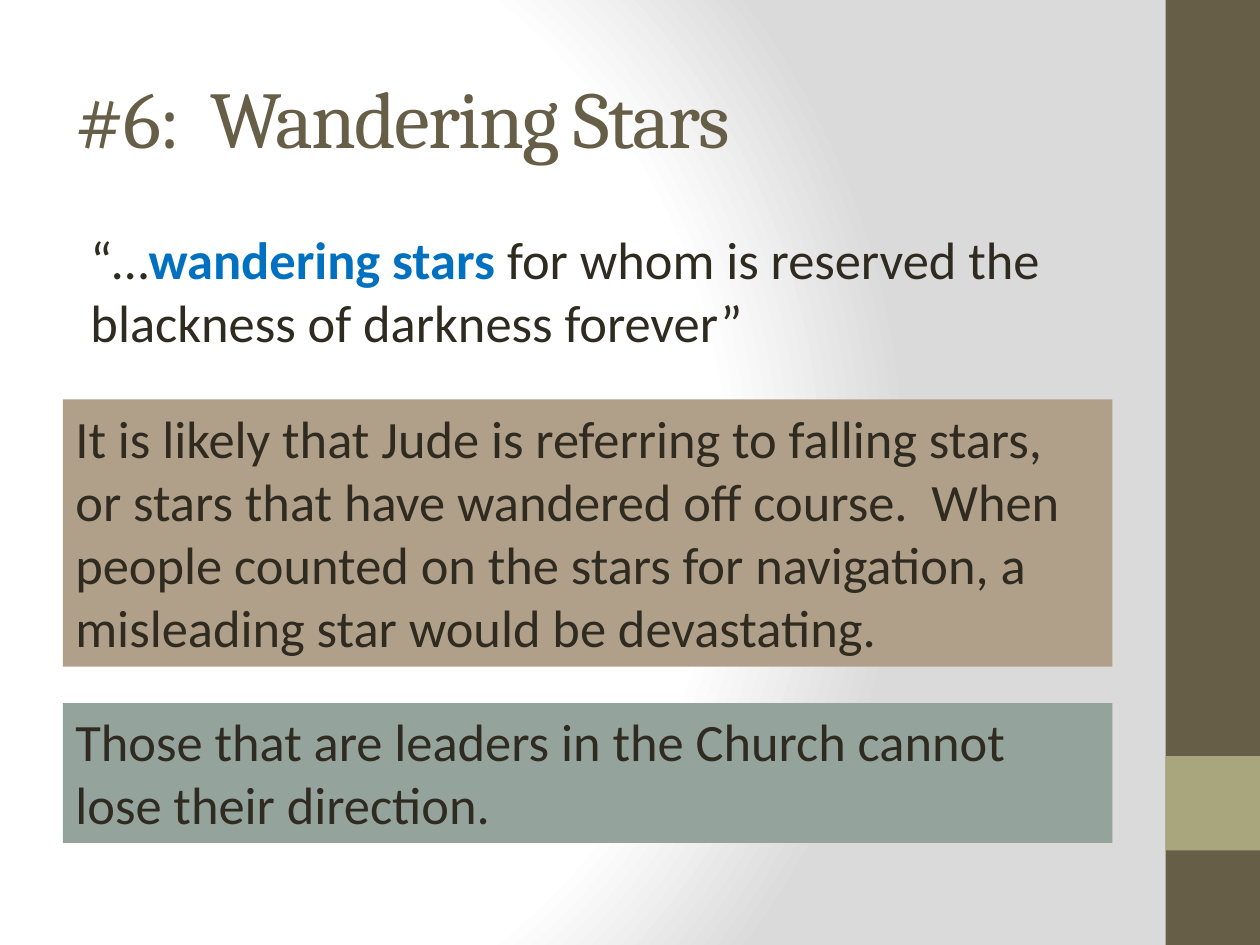
import pptx
import pptx.util
import pptx.oxml
import pptx.dml.color
import pptx.enum.shapes
import pptx.enum.text

Inches, Pt = pptx.util.Inches, pptx.util.Pt
RGB = pptx.dml.color.RGBColor
RECT = pptx.enum.shapes.MSO_SHAPE.RECTANGLE
ANCHOR = pptx.enum.text.MSO_ANCHOR
ALIGN = pptx.enum.text.PP_ALIGN

OLIVE = RGB(0x67, 0x5E, 0x47)
SAGE = RGB(0xA9, 0xA5, 0x7C)
TAN = RGB(0xB1, 0xA0, 0x89)
TEAL = RGB(0x95, 0xA3, 0x9D)
INK = RGB(0x2F, 0x2B, 0x20)
BLUE = RGB(0x00, 0x70, 0xC0)

# Content
TITLE = "#6:  Wandering Stars"
QUOTE = [
    ("“…", False),
    ("wandering stars ", True),
    ("for whom is reserved the blackness of darkness forever”", False),
]
NOTES = [  # text, fill, top, height
    ("It is likely that Jude is referring to falling stars, or stars that "
     "have wandered off course.  When people counted on the stars for "
     "navigation, a misleading star would be devastating.", TAN, 3.17, 2.12),
    ("Those that are leaders in the Church cannot lose their direction.",
     TEAL, 5.58, 1.11),
]
BANDS = [(0, 7.5, OLIVE), (6, 0.75, SAGE)]  # top, height, fill
STOPS = [(0, "FFFFFF"), (75, "FFFFFF"), (100, "DADADA")]

LEFT, WIDTH = 0.5, 8.33
SIDE, THICK = 9.25, 0.75


def place(left, top, width, height):
    return [Inches(n) for n in (left, top, width, height)]


def add_rect(slide, box, fill):
    rect = slide.shapes.add_shape(RECT, *box)
    rect.shadow.inherit = False
    rect.fill.solid()
    rect.fill.fore_color.rgb = fill
    rect.line.fill.background()
    return rect


def set_font(para, name, size, color):
    para.alignment = ALIGN.LEFT
    para.font.name = name
    para.font.size = Pt(size)
    para.font.color.rgb = color


def set_glow(slide):
    fill = slide.background.fill
    fill.gradient()
    old = slide.background._cSld.bg.bgPr[0]
    stops = "".join(
        f'<a:gs pos="{pos * 1000}"><a:srgbClr val="{color}"/></a:gs>'
        for pos, color in STOPS)
    new = pptx.oxml.parse_xml(
        '<a:gradFill xmlns:a="http://schemas.openxmlformats.org/drawingml/2006/main"'
        f' rotWithShape="1"><a:gsLst>{stops}</a:gsLst><a:path path="circle">'
        '<a:fillToRect l="20000" t="50000" r="100000" b="50000"/>'
        '</a:path></a:gradFill>')
    old.getparent().replace(old, new)


def main():
    prs = pptx.Presentation()
    prs.slide_width, prs.slide_height = Inches(10), Inches(7.5)
    slide = prs.slides.add_slide(prs.slide_layouts[5])
    set_glow(slide)

    # Side bands
    for top, height, fill in BANDS:
        add_rect(slide, place(SIDE, top, THICK, height), fill)

    # Title
    title = slide.shapes.title
    title.left, title.top, title.width, title.height = place(
        LEFT, 0.3, WIDTH, 1.25)
    frame = title.text_frame
    frame.text = TITLE
    frame.vertical_anchor = ANCHOR.MIDDLE
    para = frame.paragraphs[0]
    set_font(para, "Cambria", 46, OLIVE)
    para.runs[0].font._element.set("spc", "-100")

    # Quote
    quote = slide.shapes.add_textbox(*place(LEFT, 1.75, WIDTH, 1.42))
    frame = quote.text_frame
    frame.word_wrap = True
    para = frame.paragraphs[0]
    set_font(para, "Calibri", 30, INK)
    props = para._p.get_or_add_pPr()
    props.set("marL", str(Inches(0.12)))
    props.set("indent", "0")
    for text, strong in QUOTE:
        run = para.add_run()
        run.text = text
        if strong:
            run.font.bold = True
            run.font.color.rgb = BLUE

    # Notes
    for text, fill, top, height in NOTES:
        note = add_rect(slide, place(LEFT, top, WIDTH, height), fill)
        frame = note.text_frame
        frame.text = text
        frame.word_wrap = True
        frame.auto_size = pptx.enum.text.MSO_AUTO_SIZE.SHAPE_TO_FIT_TEXT
        frame.vertical_anchor = ANCHOR.TOP
        set_font(frame.paragraphs[0], "Calibri", 30, INK)

    prs.save("out.pptx")


if __name__ == "__main__":
    main()
